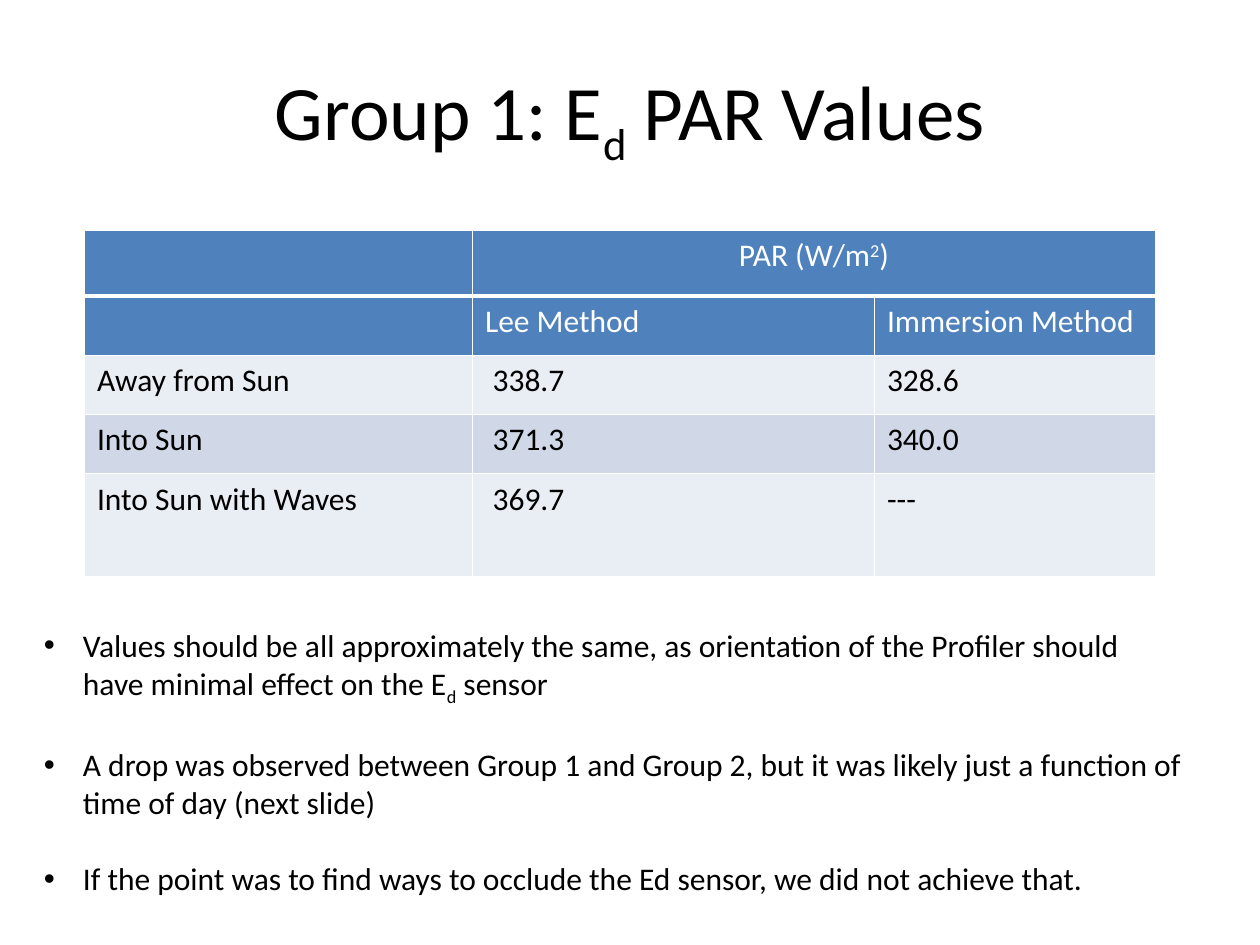
from lxml import etree
from pptx import Presentation
from pptx.dml.color import RGBColor
from pptx.enum.text import MSO_ANCHOR, PP_ALIGN
from pptx.oxml.ns import qn
from pptx.util import Inches, Pt

CENTER, LEFT, MIDDLE = PP_ALIGN.CENTER, PP_ALIGN.LEFT, MSO_ANCHOR.MIDDLE
BLACK, WHITE, BLUE = "000000", "FFFFFF", "4F81BD"
BANDS = ["E9EDF4", "D0D8E8"]
SUBSCRIPT, SUPERSCRIPT = -25, 30


def color(value):
    return RGBColor.from_string(value)


def write(para, pieces, size, ink, align=LEFT):
    """Fill a paragraph with (text, baseline shift in percent) pieces."""
    para.alignment = align
    for text, shift in pieces:
        span = para.add_run()
        span.text = text
        span.font.name = "Calibri"
        span.font.size = Pt(size)
        span.font.color.rgb = color(ink)
        if shift:
            span._r.get_or_add_rPr().set("baseline", str(shift * 1000))


deck = Presentation()
deck.slide_width, deck.slide_height = Inches(10), Inches(7.5)
page = deck.slides.add_slide(deck.slide_layouts[6])

# The page is a grid of 100 columns by 100 rows
COLUMN, ROW = deck.slide_width // 100, deck.slide_height // 100

# Title
title = page.shapes.add_textbox(5 * COLUMN, 4 * ROW, 90 * COLUMN, int(16.67 * ROW))
title.text_frame.word_wrap = True
title.text_frame.vertical_anchor = MIDDLE
write(title.text_frame.paragraphs[0],
      [("Group 1: E", 0), ("d", SUBSCRIPT), (" PAR Values", 0)], 44, BLACK, CENTER)

# Table of PAR values
column_widths = [30.8, 31.9, 22.3]
row_heights = [6.93, 6.27, 6.27, 6.27, 10.93]
values = [
    ["", "", ""],
    ["", "Lee Method", "Immersion Method"],
    ["Away from Sun", "338.7", "328.6"],
    ["Into Sun", "371.3", "340.0"],
    ["Into Sun with Waves", "369.7", "---"],
]
table = page.shapes.add_table(
    len(values), len(column_widths), int(6.7 * COLUMN), int(24.4 * ROW),
    int(sum(column_widths) * COLUMN), int(sum(row_heights) * ROW)).table
for column, width in zip(table.columns, column_widths):
    column.width = int(width * COLUMN)
for row, height in zip(table.rows, row_heights):
    row.height = int(height * ROW)

for r, row_values in enumerate(values):
    heading = r < 2
    for c, value in enumerate(row_values):
        cell = table.cell(r, c)
        properties = cell._tc.get_or_add_tcPr()
        for side in "LRTB":
            width = 3 if r == 0 and side == "B" else 1
            line = etree.SubElement(properties, qn(f"a:ln{side}"), w=str(Pt(width)))
            paint = etree.SubElement(line, qn("a:solidFill"))
            etree.SubElement(paint, qn("a:srgbClr"), val=WHITE)
        cell.fill.solid()
        cell.fill.fore_color.rgb = color(BLUE if heading else BANDS[r % 2])
        if c == 1 and not heading:
            cell.margin_left = Inches(0.16)
        if value:
            write(cell.text_frame.paragraphs[0], [(value, 0)], 18,
                  WHITE if heading else BLACK)

unit = table.cell(0, 1)
unit.merge(table.cell(0, 2))
write(unit.text_frame.paragraphs[0],
      [("PAR (W/m", 0), ("2", SUPERSCRIPT), (")", 0)], 18, WHITE, CENTER)

# Bulleted remarks
remarks = [
    [("Values should be all approximately the same, as orientation of the "
      "Profiler should have minimal effect on the E", 0),
     ("d", SUBSCRIPT), (" sensor", 0)],
    [("A drop was observed between Group 1 and Group 2, but it was likely just "
      "a function of time of day (next slide)", 0)],
    [("If the point was to find ways to occlude the Ed sensor, we did not "
      "achieve that.", 0)],
]
box = page.shapes.add_textbox(int(2.5 * COLUMN), int(65.6 * ROW),
                              int(92.5 * COLUMN), int(29.6 * ROW))
frame = box.text_frame
frame.word_wrap = True
for index, pieces in enumerate(remarks):
    para = frame.add_paragraph() if index else frame.paragraphs[0]
    write(para, pieces, 18, BLACK)
    if index < len(remarks) - 1:
        para.space_after = Pt(22)
    properties = para._p.get_or_add_pPr()
    properties.set("marL", str(Inches(0.31)))
    properties.set("indent", str(-Inches(0.31)))
    etree.SubElement(properties, qn("a:buFont"), typeface="Arial")
    etree.SubElement(properties, qn("a:buChar"), char="•")

deck.save("out.pptx")
